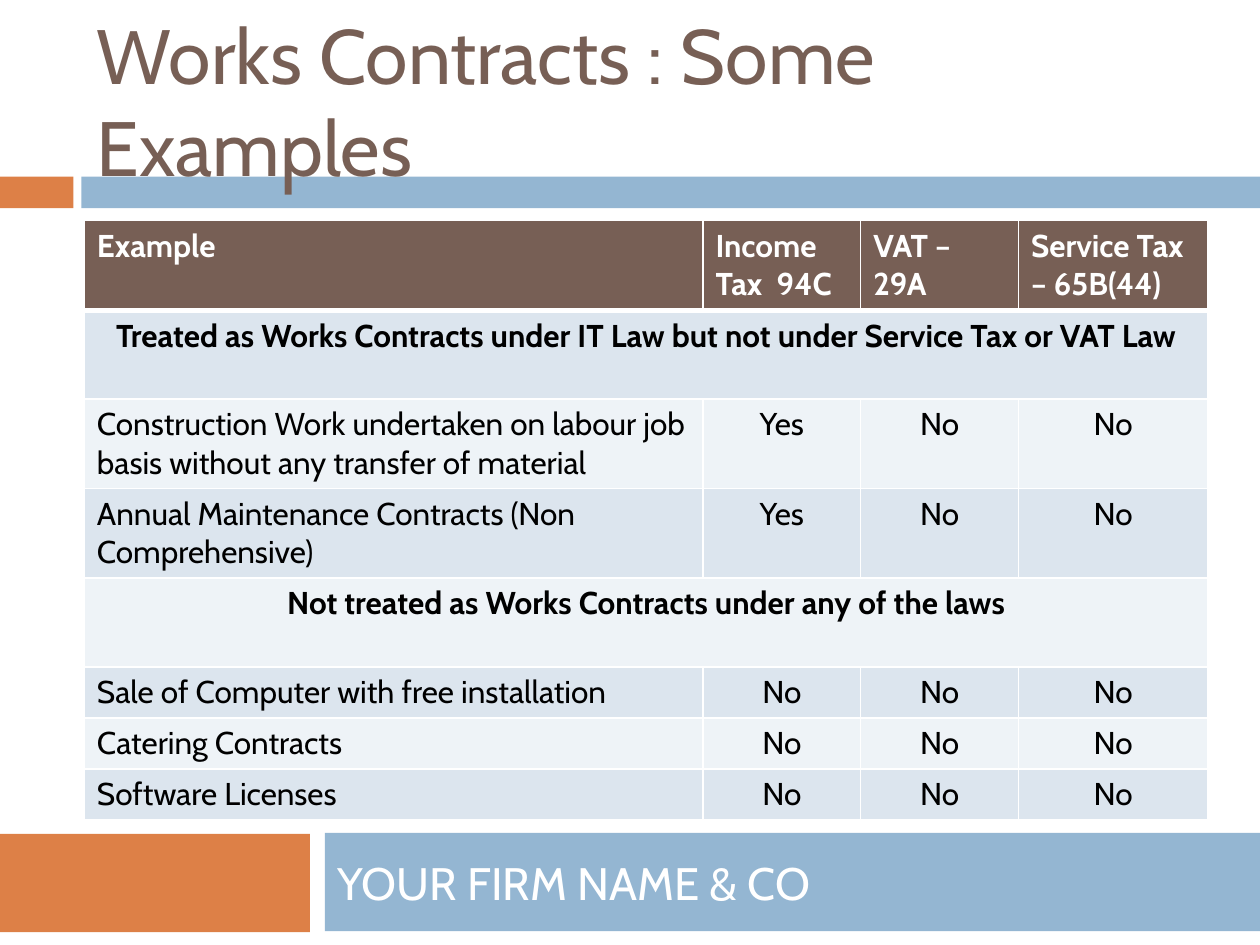
from pptx import Presentation
from pptx.dml.color import RGBColor
from pptx.enum.shapes import MSO_SHAPE
from pptx.enum.text import MSO_ANCHOR, MSO_AUTO_SIZE, PP_ALIGN
from pptx.oxml.ns import qn
from pptx.util import Cm, Pt
from lxml.etree import SubElement

FONT = "Cabin"
BROWN = RGBColor(0x77, 0x5F, 0x55)
ORANGE = RGBColor(0xDD, 0x80, 0x47)
BLUE = RGBColor(0x94, 0xB6, 0xD2)
DARK_BAND = RGBColor(0xDC, 0xE5, 0xEE)
LIGHT_BAND = RGBColor(0xEE, 0xF3, 0xF7)
WHITE = RGBColor(0xFF, 0xFF, 0xFF)
BLACK = RGBColor(0x00, 0x00, 0x00)

COLUMN_WIDTHS = (12.47, 3.18, 3.18, 3.82)
TALL_ROW, SHORT_ROW = 1.79, 1.03

# A row with a single entry is a heading across the whole table
ROWS = [
    (TALL_ROW, ["Example", "Income Tax  94C", "VAT – 29A", "Service Tax – 65B(44)"]),
    (TALL_ROW, ["Treated as Works Contracts under IT Law but not under Service Tax or VAT Law"]),
    (TALL_ROW, ["Construction Work undertaken on labour job basis without any transfer of material",
                "Yes", "No", "No"]),
    (TALL_ROW, ["Annual Maintenance Contracts (Non Comprehensive)", "Yes", "No", "No"]),
    (TALL_ROW, ["Not treated as Works Contracts under any of the laws"]),
    (SHORT_ROW, ["Sale of Computer with free installation", "No", "No", "No"]),
    (SHORT_ROW, ["Catering Contracts", "No", "No", "No"]),
    (SHORT_ROW, ["Software Licenses", "No", "No", "No"]),
]


def write_text(frame, text, size, color, bold=False, align=PP_ALIGN.LEFT):
    frame.text = text
    para = frame.paragraphs[0]
    para.alignment = align
    font = para.font
    font.name, font.size, font.bold = FONT, Pt(size), bold
    font.color.rgb = color


def add_bar(page, left, top, width, height, color):
    bar = page.shapes.add_shape(MSO_SHAPE.RECTANGLE, Cm(left), Cm(top), Cm(width), Cm(height))
    bar.shadow.inherit = False
    bar.fill.solid()
    bar.fill.fore_color.rgb = color
    bar.line.fill.background()
    return bar


def place_title(page, text):
    title = page.shapes.title
    title.left, title.top, title.width, title.height = Cm(1.7), Cm(0.64), Cm(22.66), Cm(2.74)
    frame = title.text_frame
    frame.word_wrap = True
    frame.auto_size = MSO_AUTO_SIZE.NONE
    frame.vertical_anchor = MSO_ANCHOR.MIDDLE
    write_text(frame, text, 44, BROWN)
    # The title overlaps the upper bar, so it goes in front
    page.shapes._spTree.append(title._element)


def set_borders(cell, top, bottom):
    properties = cell._tc.get_or_add_tcPr()
    for side, width in (("L", 1), ("R", 1), ("T", top), ("B", bottom)):
        line = SubElement(properties, qn(f"a:ln{side}"), w=str(Pt(width)))
        fill = SubElement(line, qn("a:solidFill"))
        SubElement(fill, qn("a:srgbClr"), val=str(WHITE))


def style_cell(cell, row):
    set_borders(cell, top=3 if row == 1 else 1, bottom=3 if row == 0 else 1)
    cell.fill.solid()
    cell.fill.fore_color.rgb = BROWN if row == 0 else (LIGHT_BAND, DARK_BAND)[row % 2]


def add_examples_table(page):
    height = sum(row_height for row_height, _ in ROWS)
    table = page.shapes.add_table(len(ROWS), len(COLUMN_WIDTHS), Cm(1.7), Cm(4.45),
                                  Cm(sum(COLUMN_WIDTHS)), Cm(height)).table
    for column, width in zip(table.columns, COLUMN_WIDTHS):
        column.width = Cm(width)
    for row, (row_height, entries) in enumerate(ROWS):
        table.rows[row].height = Cm(row_height)
        for column in range(len(COLUMN_WIDTHS)):
            style_cell(table.cell(row, column), row)
        heading = len(entries) == 1
        if heading:
            table.cell(row, 0).merge(table.cell(row, len(COLUMN_WIDTHS) - 1))
        for column, text in enumerate(entries):
            centered = heading or (row > 0 and column > 0)
            write_text(table.cell(row, column).text_frame, text, 18,
                       WHITE if row == 0 else BLACK,
                       bold=row == 0 or heading,
                       align=PP_ALIGN.CENTER if centered else PP_ALIGN.LEFT)


def main():
    deck = Presentation()
    deck.slide_width, deck.slide_height = Cm(25.4), Cm(19.05)
    page = deck.slides.add_slide(deck.slide_layouts[5])

    # Bars under the title and at the foot
    add_bar(page, 0, 3.56, 1.48, 0.64, ORANGE)
    add_bar(page, 1.64, 3.56, 23.76, 0.64, BLUE)
    add_bar(page, 0, 16.81, 6.25, 1.98, ORANGE)
    footer = add_bar(page, 6.55, 16.79, 18.85, 1.98, BLUE)
    footer.text_frame.vertical_anchor = MSO_ANCHOR.MIDDLE
    write_text(footer.text_frame, "YOUR FIRM NAME & CO", 26, WHITE)

    # Title and table
    place_title(page, "Works Contracts : Some Examples")
    add_examples_table(page)
    deck.save("out.pptx")


if __name__ == "__main__":
    main()
